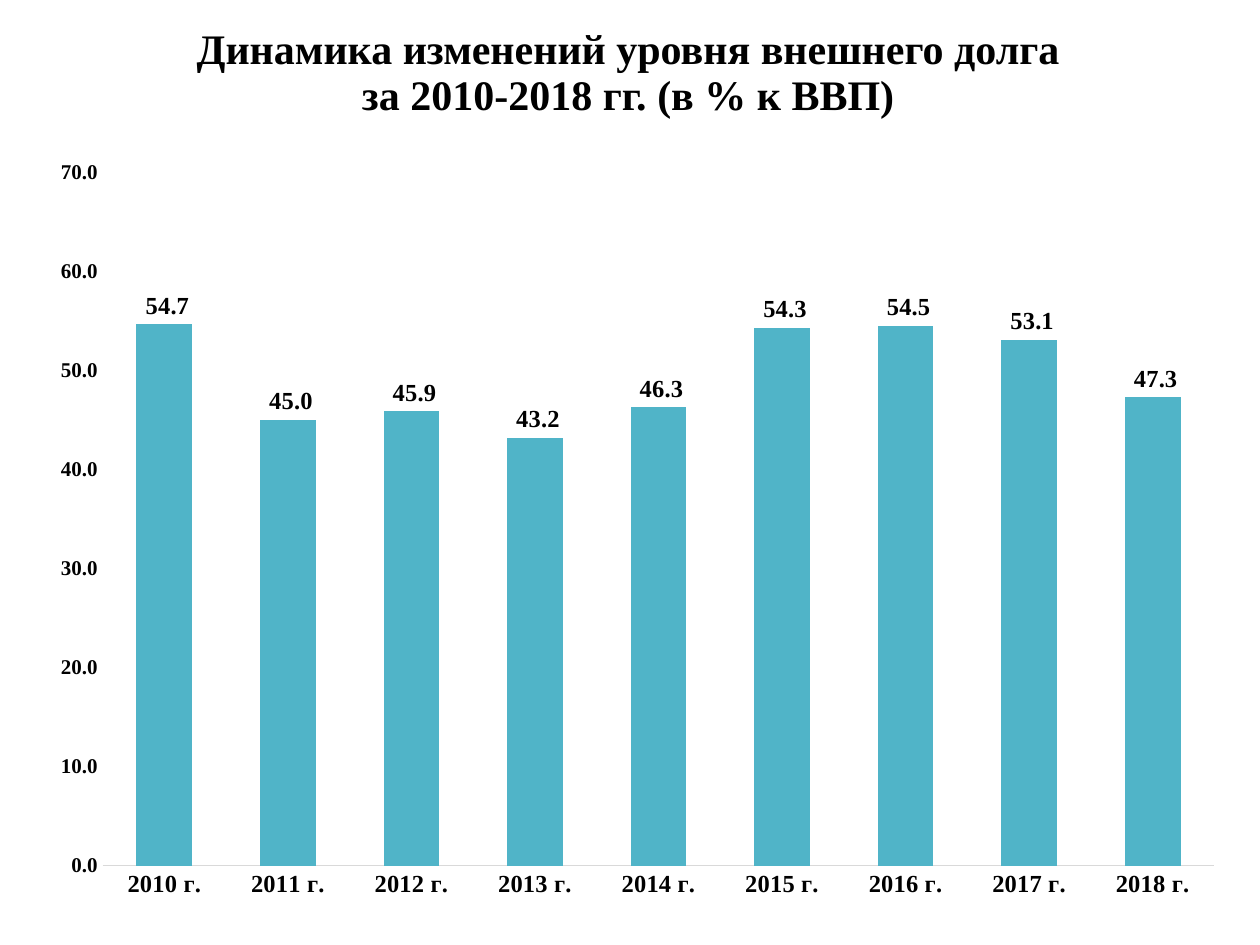
from pptx import Presentation
from pptx.chart.data import CategoryChartData
from pptx.dml.color import RGBColor
from pptx.enum.chart import XL_CHART_TYPE, XL_LABEL_POSITION, XL_TICK_MARK
from pptx.enum.text import MSO_ANCHOR, PP_ALIGN
from pptx.util import Inches, Pt

COLORS = {"text": "000000", "bar": "50B4C8", "axis": "D9D9D9"}
FONT_NAME = "Times New Roman"
NUMBER_FORMAT = r"#\ ##0.0"

TITLE_LINES = [
    "Динамика изменений уровня внешнего долга",
    "за 2010-2018 гг. (в % к ВВП)",
]
FIRST_YEAR = 2010
DEBT_SHARES = [54.7, 45.0, 45.9, 43.2, 46.3, 54.3, 54.5, 53.1, 47.3]


def apply_format(target, values):
    for name, value in values.items():
        setattr(target, name, value)


def color(name):
    return RGBColor.from_string(COLORS[name])


class SlideBuilder:
    """Holds the style and the current slide; boxes are in percent of the slide."""

    def __init__(self, presentation):
        self.width = presentation.slide_width
        self.height = presentation.slide_height
        title_only = presentation.slide_layouts[5]
        self.slide = presentation.slides.add_slide(title_only)

    def box(self, left, top, width, height):
        return (int(self.width * left / 100), int(self.height * top / 100),
                int(self.width * width / 100), int(self.height * height / 100))

    def style_font(self, font, size):
        apply_format(font, {"name": FONT_NAME, "size": Pt(size), "bold": True})
        font.color.rgb = color("text")

    def title(self, lines, area, size):
        shape = self.slide.shapes.title
        left, top, width, height = self.box(*area)
        apply_format(shape, {"left": left, "top": top, "width": width, "height": height})
        frame = shape.text_frame
        apply_format(frame, {"word_wrap": True, "vertical_anchor": MSO_ANCHOR.TOP})
        frame.text = "\n".join(lines)
        for paragraph in frame.paragraphs:
            apply_format(paragraph, {"alignment": PP_ALIGN.CENTER, "line_spacing": Pt(26),
                                     "space_before": Pt(0)})
            self.style_font(paragraph.runs[0].font, size)

    def column_chart(self, categories, values, area):
        data = CategoryChartData(number_format=NUMBER_FORMAT)
        data.categories = categories
        data.add_series("Внешний долг", values)
        chart = self.slide.shapes.add_chart(
            XL_CHART_TYPE.COLUMN_CLUSTERED, *self.box(*area), data).chart
        apply_format(chart, {"has_title": False, "has_legend": False})
        self.style_font(chart.font, 14)

        # Columns and their labels
        plot = chart.plots[0]
        apply_format(plot, {"gap_width": 121, "overlap": -27,
                            "vary_by_categories": False, "has_data_labels": True})
        fill = plot.series[0].format.fill
        fill.solid()
        fill.fore_color.rgb = color("bar")
        labels = plot.data_labels
        apply_format(labels, {"show_value": True, "number_format": NUMBER_FORMAT,
                              "number_format_is_linked": False,
                              "position": XL_LABEL_POSITION.OUTSIDE_END})
        self.style_font(labels.font, 14)

        # Axes
        for axis, size in ((chart.category_axis, 14), (chart.value_axis, 12)):
            apply_format(axis, {"has_major_gridlines": False,
                                "major_tick_mark": XL_TICK_MARK.NONE,
                                "minor_tick_mark": XL_TICK_MARK.NONE})
            self.style_font(axis.tick_labels.font, size)
        line = chart.category_axis.format.line
        line.color.rgb = color("axis")
        line.width = Pt(0.75)
        value_axis = chart.value_axis
        value_axis.format.line.fill.background()
        apply_format(value_axis, {"minimum_scale": 0, "maximum_scale": 70, "major_unit": 10})
        apply_format(value_axis.tick_labels, {"number_format": NUMBER_FORMAT,
                                              "number_format_is_linked": False})


def main():
    presentation = Presentation()
    apply_format(presentation, {"slide_width": Inches(10), "slide_height": Inches(7.5)})
    builder = SlideBuilder(presentation)
    builder.title(TITLE_LINES, (3.2, 2.27, 93.3, 11.07), 24)
    years = [f"{FIRST_YEAR + index} г." for index in range(len(DEBT_SHARES))]
    builder.column_chart(years, DEBT_SHARES, (2.5, 15.47, 95.8, 81.2))
    presentation.save("out.pptx")


if __name__ == "__main__":
    main()
